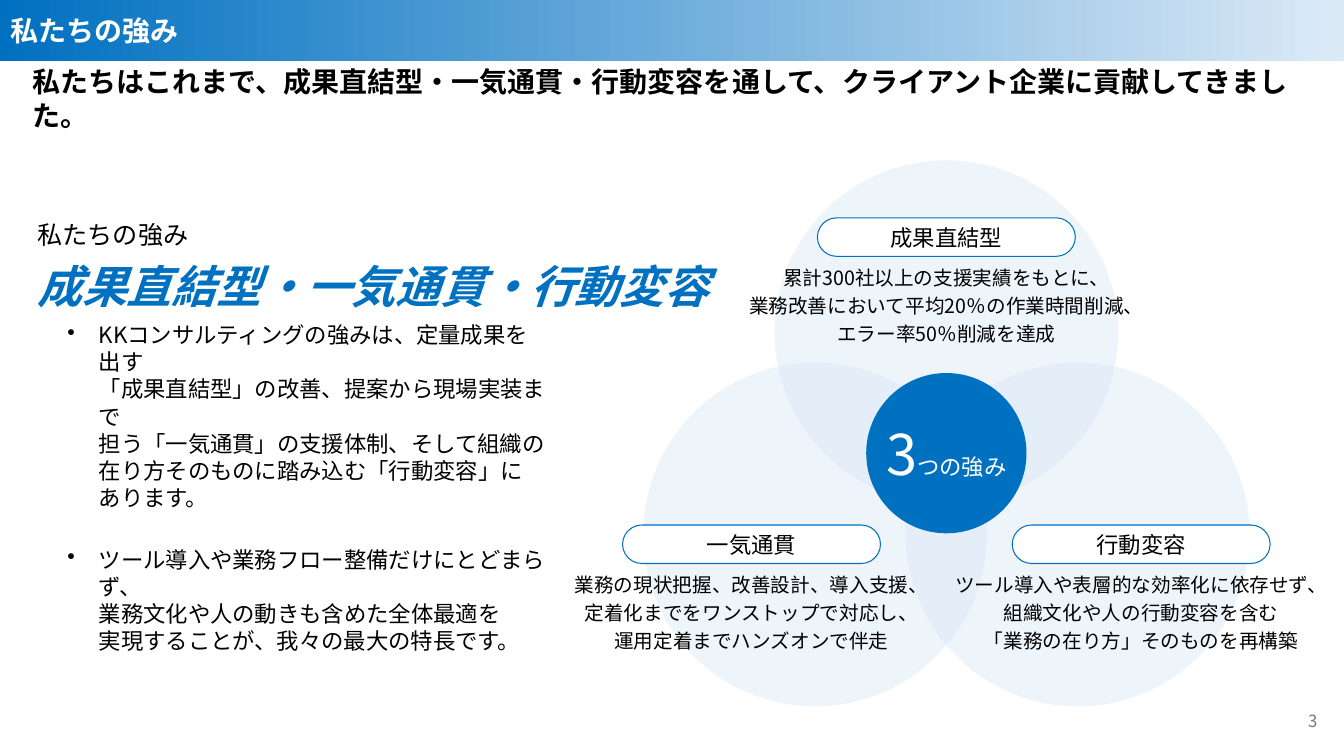
from dataclasses import dataclass

from lxml.etree import SubElement
from pptx import Presentation
from pptx.dml.color import RGBColor
from pptx.enum.shapes import MSO_SHAPE
from pptx.enum.text import MSO_ANCHOR, MSO_AUTO_SIZE, PP_ALIGN
from pptx.oxml.ns import qn
from pptx.util import Cm, Pt


@dataclass(frozen=True)
class Theme:
    font: str = "Noto Sans CJK JP"
    line_height: float = 1.21
    blue: RGBColor = RGBColor(0x00, 0x70, 0xC0)
    pale: RGBColor = RGBColor(0xDC, 0xEA, 0xF7)
    white: RGBColor = RGBColor(0xFF, 0xFF, 0xFF)
    black: RGBColor = RGBColor(0x00, 0x00, 0x00)
    gray: RGBColor = RGBColor(0x79, 0x79, 0x79)
    page_size: int = 12
    detail_size: int = 14
    body_size: int = 16
    lead_size: int = 18
    title_size: int = 20
    headline_size: int = 32
    hub_size: int = 40


THEME = Theme()
CENTER_X = 23.85  # axis of the three-circle diagram, in cm
CIRCLE = 8.66
HUB = 4.04
LABEL_WIDTH, LABEL_HEIGHT = 6.5, 0.97

# Label, detail lines, circle offset, circle top, label offset, label top
STRENGTHS = [
    ("一気通貫",
     ["業務の現状把握、改善設計、導入支援、",
      "定着化までをワンストップで対応し、",
      "運用定着までハンズオンで伴走"], -3.31, 9.14, -4.91, 13.23),
    ("行動変容",
     ["ツール導入や表層的な効率化に依存せず、",
      "組織文化や人の行動変容を含む",
      "「業務の在り方」そのものを再構築"], 3.31, 9.14, 4.91, 13.23),
    ("成果直結型",
     ["累計300社以上の支援実績をもとに、",
      "業務改善において平均20％の作業時間削減、",
      "エラー率50％削減を達成"], 0, 4.04, 0, 5.49),
]

POINTS = [
    "KKコンサルティングの強みは、定量成果を出す\n"
    "「成果直結型」の改善、提案から現場実装まで\n"
    "担う「一気通貫」の支援体制、そして組織の\n"
    "在り方そのものに踏み込む「行動変容」に\n"
    "あります。",
    "ツール導入や業務フロー整備だけにとどまらず、\n"
    "業務文化や人の動きも含めた全体最適を\n"
    "実現することが、我々の最大の特長です。",
]


def format_paragraph(paragraph, size, color=THEME.black, bold=False,
                     italic=False, align=PP_ALIGN.LEFT, before=3):
    paragraph.alignment = align
    paragraph.space_before = Pt(before)
    paragraph.line_spacing = Pt(size * THEME.line_height)
    font = paragraph.font
    font.size, font.bold, font.italic = Pt(size), bold, italic
    font.color.rgb = color
    font.name = THEME.font
    defaults = paragraph._p.pPr.find(qn("a:defRPr"))
    SubElement(defaults, qn("a:ea")).set("typeface", THEME.font)


def write(shape, lines, size, wrap=True, **style):
    """Fill a shape with equally formatted paragraphs."""
    frame = shape.text_frame
    frame.word_wrap = wrap
    frame.auto_size = MSO_AUTO_SIZE.NONE
    frame.vertical_anchor = MSO_ANCHOR.MIDDLE
    for index, line in enumerate(lines):
        paragraph = frame.add_paragraph() if index else frame.paragraphs[0]
        paragraph.text = line
        format_paragraph(paragraph, size, **style)
    return frame.paragraphs


def add_text(shapes, box, lines, size, **style):
    shape = shapes.add_textbox(*map(Cm, box))
    return write(shape, lines, size, **style)


def add_preset(shapes, kind, box, color, line=None):
    shape = shapes.add_shape(kind, *map(Cm, box))
    shape.shadow.inherit = False
    shape.fill.solid()
    shape.fill.fore_color.rgb = color
    if line is None:
        shape.line.fill.background()
    else:
        shape.line.color.rgb = line
        shape.line.width = Pt(0.75)
    return shape


def add_circle(shapes, center_x, top):
    box = (center_x - CIRCLE / 2, top, CIRCLE, CIRCLE)
    circle = add_preset(shapes, MSO_SHAPE.OVAL, box, THEME.pale)
    color = circle._element.spPr.find(qn("a:solidFill"))[0]
    SubElement(color, qn("a:alpha")).set("val", "50000")


def add_strength(shapes, label, details, center_x, top):
    box = (center_x - LABEL_WIDTH / 2, top, LABEL_WIDTH, LABEL_HEIGHT)
    pill = add_preset(shapes, MSO_SHAPE.ROUNDED_RECTANGLE, box,
                      THEME.white, THEME.blue)
    pill.adjustments[0] = 0.5
    write(pill, [label], THEME.body_size, wrap=False, align=PP_ALIGN.CENTER)
    add_text(shapes, (center_x - CIRCLE / 2, top + 1.17, CIRCLE, 2.08),
             details, THEME.detail_size, wrap=False, align=PP_ALIGN.CENTER)


def add_hub(shapes):
    box = (CENTER_X - HUB / 2, 9.4, HUB, HUB)
    hub = add_preset(shapes, MSO_SHAPE.OVAL, box, THEME.blue)
    paragraph, = write(hub, ["3"], THEME.hub_size, wrap=False,
                       color=THEME.white, align=PP_ALIGN.CENTER)
    caption = paragraph.add_run()
    caption.text = "つの強み"
    caption.font.size = Pt(THEME.body_size)


def add_diagram(slide):
    shapes = slide.shapes.add_group_shape().shapes
    for _, _, offset, top, _, _ in STRENGTHS:
        add_circle(shapes, CENTER_X + offset, top)
    add_hub(shapes)
    for label, details, _, _, offset, top in STRENGTHS:
        add_strength(shapes, label, details, CENTER_X + offset, top)


def add_bullet(paragraph):
    properties = paragraph._p.pPr
    properties.set("marL", str(Cm(0.79)))
    properties.set("indent", str(-Cm(0.79)))
    bullet = properties.makeelement(qn("a:buChar"), {"char": "•"})
    properties.find(qn("a:defRPr")).addprevious(bullet)


def add_message(slide):
    shapes = slide.shapes.add_group_shape().shapes
    lead, headline = add_text(
        shapes, (0.69, 5.18, 16.71, 3.02),
        ["私たちの強み", "成果直結型・一気通貫・行動変容"],
        THEME.lead_size, wrap=False, before=6)
    headline.line_spacing = Pt(THEME.headline_size * THEME.line_height)
    headline.font.size = Pt(THEME.headline_size)
    headline.font.color.rgb = THEME.blue
    headline.font.bold = headline.font.italic = True

    points = add_text(shapes, (1.45, 8.48, 12.55, 7.62), POINTS,
                      THEME.body_size)
    for paragraph in points:
        add_bullet(paragraph)
    points[-1].space_before = Pt(25)


def format_title(title, width):
    title.left, title.top, title.width, title.height = 0, 0, width, Cm(1.53)
    title.fill.gradient()
    title.fill.gradient_angle = 180
    for stop, color in zip(title.fill.gradient_stops,
                           (THEME.pale, THEME.blue)):
        stop.color.rgb = color
    write(title, ["私たちの強み"], THEME.title_size, color=THEME.white,
          bold=True, before=6)


def main():
    presentation = Presentation()
    presentation.slide_width = Cm(33.87)
    presentation.slide_height = Cm(19.05)
    slide = presentation.slides.add_slide(presentation.slide_layouts[5])

    # Heading and key message
    format_title(slide.shapes.title, presentation.slide_width)
    add_text(slide.shapes, (0.56, 1.88, 32.72, 1.19),
             ["私たちはこれまで、成果直結型・一気通貫・行動変容を通して、"
              "クライアント企業に貢献してきました。"],
             THEME.title_size, bold=True, before=6)

    # Diagram on the right, explanation on the left
    add_diagram(slide)
    add_message(slide)

    # Page number
    add_text(slide.shapes, (32.21, 17.65, 1.24, 1.02), ["3"],
             THEME.page_size, color=THEME.gray, align=PP_ALIGN.RIGHT,
             before=0)
    presentation.save("out.pptx")


if __name__ == "__main__":
    main()
